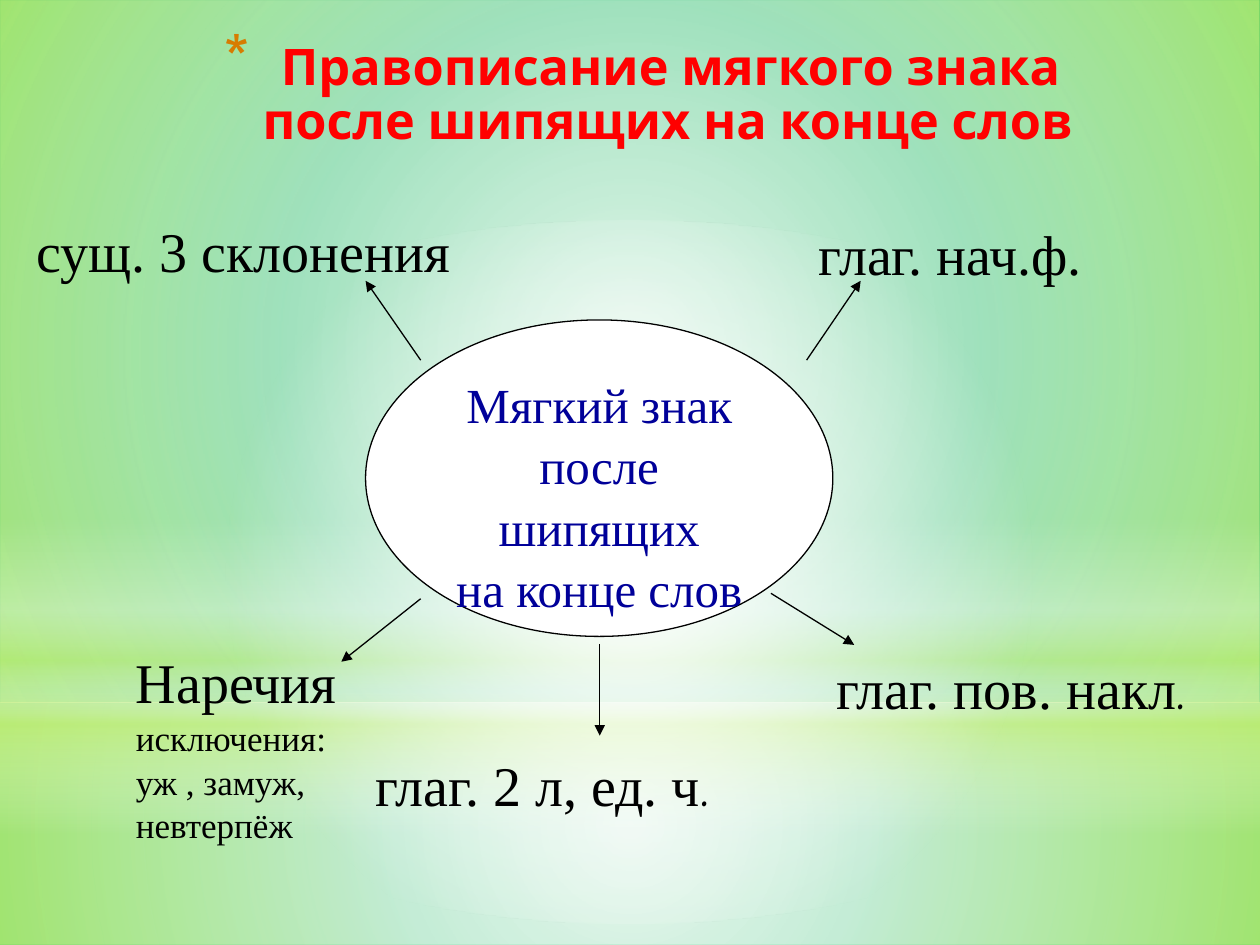
import pptx
import pptx.util
import pptx.dml.color
import pptx.enum.shapes
import pptx.enum.text
import pptx.oxml
import pptx.oxml.ns
from lxml import etree

Cm, Pt = pptx.util.Cm, pptx.util.Pt
SHAPE = pptx.enum.shapes.MSO_SHAPE
ALIGN = pptx.enum.text.PP_ALIGN
ANCHOR = pptx.enum.text.MSO_ANCHOR
qn = pptx.oxml.ns.qn

COLORS = {"bg": "00B050", "white": "FFFFFF", "lime": "CAF278", "title": "FF0000",
          "bullet": "D77C01", "center": "000099", "ink": "000000"}
SERIF = "Times New Roman"
LINE_SPACING = 1.04
RADIAL = ('<a:path path="circle"><a:fillToRect l="50000" t="50000" '
          'r="50000" b="50000"/></a:path>')
VERTICAL = '<a:lin ang="5400000" scaled="0"/>'

# Background layers: shape, box, gradient direction, (position, color, opacity) stops
LAYERS = [
    (SHAPE.RECTANGLE, (0, 14.17, 25.4, 4.88), RADIAL,
     [(0, "white", 91), (37, "white", 76), (100, "lime", 79)]),
    (SHAPE.RECTANGLE, (0, 0, 25.4, 14.17), RADIAL,
     [(0, "white", 89), (48, "white", 62), (100, "lime", 79)]),
    (SHAPE.RECTANGLE, (0, 10.46, 25.4, 6.35), VERTICAL,
     [(0, "white", 0), (29, "white", 30), (45, "lime", 40),
      (55, "white", 26), (65, "lime", 60), (100, "white", 0)]),
    (SHAPE.OVAL, (0, 4.45, 25.4, 14.17), RADIAL,
     [(0, "white", 100), (56, "white", 0)]),
]

# Arrows: x1, y1, x2, y2
ARROWS = [
    (16.26, 7.26, 17.35, 5.66),
    (8.48, 7.26, 7.37, 5.66),
    (12.09, 12.98, 12.09, 14.83),
    (8.48, 12.07, 6.88, 13.34),
    (15.54, 11.96, 17.22, 13),
]

# Labels: box, heading, final dot in another font, smaller lines
LABELS = [
    ((0.48, 4.19, 8.94, 1.63), "сущ. 3 склонения", "", []),
    ((2.49, 12.88, 4.6, 4.19), "Наречия", "",
     ["исключения:", "уж , замуж,", "невтерпёж"]),
    ((7.32, 14.96, 7.42, 1.63), "глаг. 2 л, ед. ч", ".", []),
    ((16.61, 13, 7.72, 1.63), "глаг. пов. накл", ".", []),
    ((16.26, 4.24, 5.87, 1.63), "глаг. нач.ф.", "", []),
]


def rgb(name):
    return pptx.dml.color.RGBColor.from_string(COLORS[name])


def cm(values):
    return [Cm(v) for v in values]


def set_font(font, name, size, color, bold=False):
    font.name, font.size, font.bold = name, Pt(size), bold
    font.color.rgb = rgb(color)


def add_paragraph(tf, text, size, color, align=ALIGN.LEFT):
    p = tf.paragraphs[0]
    if p.runs:
        p = tf.add_paragraph()
    p.add_run().text = text
    p.alignment = align
    p.line_spacing = LINE_SPACING
    set_font(p.font, SERIF, size, color)
    return p


def add_layer(s, kind, box, direction, stops):
    sp = s.shapes.add_shape(kind, *cm(box))
    sp.shadow.inherit = False
    sp.line.fill.background()
    gs = "".join(f'<a:gs pos="{pos * 1000}"><a:srgbClr val="{COLORS[color]}">'
                 f'<a:alpha val="{opacity * 1000}"/></a:srgbClr></a:gs>'
                 for pos, color, opacity in stops)
    grad = pptx.oxml.parse_xml(
        '<a:gradFill xmlns:a="http://schemas.openxmlformats.org/drawingml/2006/main" '
        f'rotWithShape="1"><a:gsLst>{gs}</a:gsLst>{direction}</a:gradFill>')
    sp._element.spPr.find(qn("a:prstGeom")).addnext(grad)


def add_title(s):
    tf = s.shapes.add_textbox(*cm((3.81, 0.72, 18.08, 3.18))).text_frame
    tf.word_wrap = True
    p = tf.paragraphs[0]
    p.text = " Правописание мягкого знака \vпосле шипящих на конце слов"
    p.alignment = ALIGN.RIGHT
    p.line_spacing = 0.9
    set_font(p.font, "Karla", 28.8, "title", bold=True)
    # Hanging asterisk bullet, placed ahead of the default run properties
    pPr = p._p.get_or_add_pPr()
    pPr.set("marL", str(Cm(0.89)))
    pPr.set("indent", str(-Cm(0.89)))
    color = etree.Element(qn("a:buClr"))
    etree.SubElement(color, qn("a:srgbClr"), val=COLORS["bullet"])
    size = etree.Element(qn("a:buSzPct"), val="128000")
    char = etree.Element(qn("a:buChar"), char="*")
    for el in (color, size, char):
        pPr.find(qn("a:defRPr")).addprevious(el)


def add_center(s):
    sp = s.shapes.add_shape(SHAPE.OVAL, *cm((7.37, 6.45, 9.42, 6.38)))
    sp.shadow.inherit = False
    sp.fill.solid()
    sp.fill.fore_color.rgb = rgb("white")
    sp.line.color.rgb = rgb("ink")
    sp.line.width = Pt(0.75)
    tf = sp.text_frame
    tf.word_wrap = True
    tf.vertical_anchor = ANCHOR.TOP
    for text in ("Мягкий знак после шипящих", "на конце слов"):
        add_paragraph(tf, text, 28, "center", ALIGN.CENTER)


def add_arrow(s, ends):
    line = s.shapes.add_connector(pptx.enum.shapes.MSO_CONNECTOR.STRAIGHT, *cm(ends))
    line.line.color.rgb = rgb("ink")
    line.line.width = Pt(0.75)
    etree.SubElement(line.line._get_or_add_ln(), qn("a:tailEnd"), type="triangle")
    etree.SubElement(line._element.spPr, qn("a:effectLst"))


def add_label(s, box, heading, dot, details):
    tf = s.shapes.add_textbox(*cm(box)).text_frame
    tf.word_wrap = False
    p = add_paragraph(tf, heading, 32, "ink")
    if dot:
        r = p.add_run()
        r.text = dot
        r.font.name = "Comic Neue"
    for text in details:
        add_paragraph(tf, text, 20, "ink")


def main():
    prs = pptx.Presentation()
    prs.slide_width, prs.slide_height = cm((25.4, 19.05))
    s = prs.slides.add_slide(prs.slide_layouts[6])

    # Background
    s.background.fill.solid()
    s.background.fill.fore_color.rgb = rgb("bg")
    for layer in LAYERS:
        add_layer(s, *layer)

    # Title and diagram
    add_title(s)
    add_center(s)
    for ends in ARROWS:
        add_arrow(s, ends)
    for label in LABELS:
        add_label(s, *label)

    prs.save("out.pptx")


if __name__ == "__main__":
    main()
